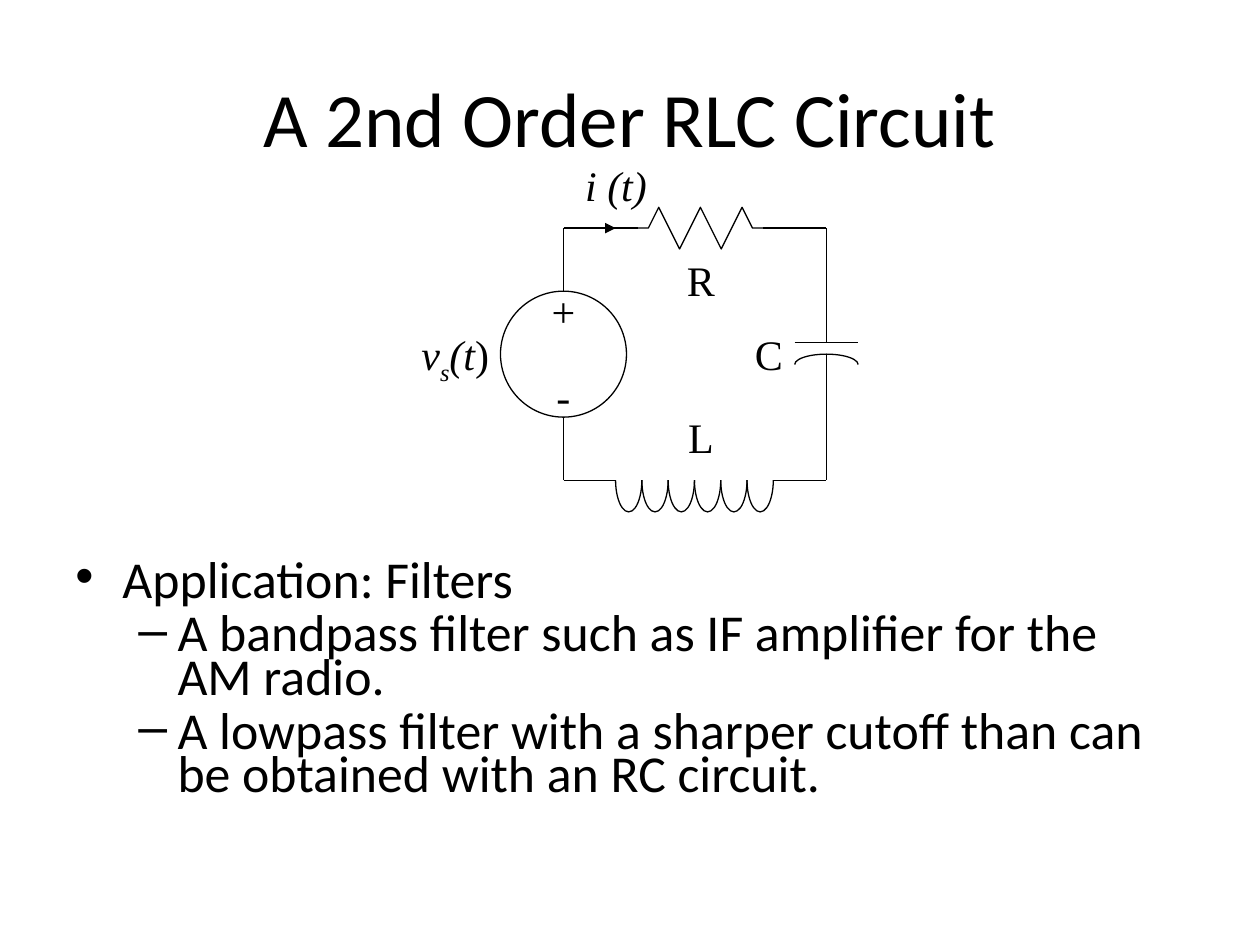
import dataclasses
import typing

import lxml.etree
import pptx
import pptx.dml.color
import pptx.enum.dml
import pptx.enum.shapes
import pptx.enum.text
import pptx.oxml.ns
import pptx.util

Cm = pptx.util.Cm
Pt = pptx.util.Pt
Align = pptx.enum.text.PP_ALIGN
Shape = pptx.enum.shapes.MSO_SHAPE
qn = pptx.oxml.ns.qn

COLORS = {"ink": "000000"}
SANS = "Calibri"
SERIF = "Times New Roman"
LINE_WIDTH = 0.75

LEFT, RIGHT, TOP, BOTTOM = 11.36, 16.66, 4.6, 9.68
SOURCE_TOP, SOURCE_SIZE = 5.87, 2.54
RESISTOR_START, RESISTOR_STEP, RESISTOR_RISE = 12.86, 0.21, 0.42
RESISTOR_END = RESISTOR_START + 12 * RESISTOR_STEP
PLATE_TOP, PLATE_BOTTOM, PLATE_HALF = 6.91, 7.14, 0.64
COIL_START, COIL_STEP, COIL_TURNS, COIL_DEPTH = 12.41, 0.53, 6, 0.64
COIL_END = COIL_START + COIL_TURNS * COIL_STEP


@dataclasses.dataclass(frozen=True)
class Span:
    text: str
    italic: bool = False
    baseline: int = 0


@dataclasses.dataclass(frozen=True)
class Label:
    spans: tuple[Span, ...]
    left: float
    top: float
    width: float
    align: typing.Any = Align.CENTER


@dataclasses.dataclass(frozen=True)
class Wire:
    start: tuple[float, float]
    end: tuple[float, float]
    arrow: bool = False


@dataclasses.dataclass(frozen=True)
class Bullet:
    text: str
    mark: str
    margin: float
    hang: float


LABELS = [
    Label((Span("R"),), 12.86, 5.0, 2.54),
    Label((Span("L"),), 12.86, 8.18, 2.54),
    Label((Span("+"),), 10.51, 5.64, 1.7),
    Label((Span("-"),), 10.51, 7.34, 1.7),
    Label((Span("C"),), 13.06, 6.5, 2.97, Align.RIGHT),
    Label((Span("v", True), Span("s", True, -25000), Span("(t", True), Span(")")),
          7.14, 6.5, 2.97, Align.RIGHT),
    Label((Span("i (t)", True),), 11.15, 3.1, 2.54),
]

WIRES = [
    Wire((LEFT, SOURCE_TOP), (LEFT, TOP)),
    Wire((LEFT, TOP), (RESISTOR_START, TOP)),
    Wire((RESISTOR_END, TOP), (RIGHT, TOP)),
    Wire((RIGHT, TOP), (RIGHT, PLATE_TOP)),
    Wire((RIGHT - PLATE_HALF, PLATE_TOP), (RIGHT + PLATE_HALF, PLATE_TOP)),
    Wire((RIGHT, PLATE_BOTTOM), (RIGHT, BOTTOM)),
    Wire((COIL_END, BOTTOM), (RIGHT, BOTTOM)),
    Wire((LEFT, BOTTOM), (COIL_START, BOTTOM)),
    Wire((LEFT, BOTTOM), (LEFT, SOURCE_TOP + SOURCE_SIZE)),
    Wire((11.99, TOP), (12.41, TOP), arrow=True),
]

BULLETS = [
    Bullet("Application: Filters", "•", 0.95, 0.95),
    Bullet("A bandpass filter such as IF amplifier for the AM radio.", "–", 2.06, 0.79),
    Bullet("A lowpass filter with a sharper cutoff than can be obtained with an RC circuit.",
           "–", 2.06, 0.79),
]


def ink() -> pptx.dml.color.RGBColor:
    return pptx.dml.color.RGBColor.from_string(COLORS["ink"])


def add_span(para, text: str, *, size: float, font: str,
             italic: bool = False, baseline: int = 0) -> None:
    span = para.add_run()
    span.text = text
    span.font.size = Pt(size)
    span.font.name = font
    span.font.italic = italic
    span.font.color.rgb = ink()
    if baseline:
        span._r.get_or_add_rPr().set("baseline", str(baseline))


def add_box(page, left: float, top: float, width: float, height: float):
    box = page.shapes.add_textbox(Cm(left), Cm(top), Cm(width), Cm(height))
    box.text_frame.word_wrap = True
    return box.text_frame


def add_label(page, label: Label) -> None:
    para = add_box(page, label.left, label.top, label.width, 1.27).paragraphs[0]
    para.alignment = label.align
    for span in label.spans:
        add_span(para, span.text, size=24, font=SERIF,
                 italic=span.italic, baseline=span.baseline)


def add_wire(page, wire: Wire) -> None:
    line = page.shapes.add_connector(
        pptx.enum.shapes.MSO_CONNECTOR.STRAIGHT,
        *(Cm(value) for value in wire.start + wire.end))
    line.line.color.rgb = ink()
    line.line.width = Pt(LINE_WIDTH)
    if wire.arrow:
        lxml.etree.SubElement(line.line._get_or_add_ln(), qn("a:tailEnd"), type="triangle")
    lxml.etree.SubElement(line._element.spPr, qn("a:effectLst"))


def outline(shape) -> None:
    shape.shadow.inherit = False
    shape.fill.background()
    shape.line.color.rgb = ink()
    shape.line.width = Pt(LINE_WIDTH)


def add_outline(page, kind, left: float, top: float, width: float, height: float,
                angles: tuple[int, ...] = ()) -> None:
    shape = page.shapes.add_shape(kind, Cm(left), Cm(top), Cm(width), Cm(height))
    for index, degrees in enumerate(angles):
        shape.adjustments[index] = degrees * 0.6
    outline(shape)


def add_resistor(page) -> None:
    corners = [(0, 0), (1, 0), (2, -1), (4, 1), (6, -1), (8, 1), (10, -1), (11, 0), (12, 0)]
    points = [(Cm(RESISTOR_START + x * RESISTOR_STEP), Cm(TOP + y * RESISTOR_RISE))
              for x, y in corners]
    builder = page.shapes.build_freeform(*points[0])
    builder.add_line_segments(points[1:], close=False)
    outline(builder.convert_to_shape())


def add_bullets(page) -> None:
    frame = add_box(page, 1.27, 11.23, 22.86, 5.79)
    for index, bullet in enumerate(BULLETS):
        para = frame.paragraphs[0] if index == 0 else frame.add_paragraph()
        properties = para._p.get_or_add_pPr()
        properties.set("marL", str(Cm(bullet.margin)))
        properties.set("indent", str(-Cm(bullet.hang)))
        lxml.etree.SubElement(properties, qn("a:buFont"), typeface="Arial")
        lxml.etree.SubElement(properties, qn("a:buChar"), char=bullet.mark)
        para.line_spacing = 0.7
        if index:
            para.level = 1
            para.space_before = Pt(5.9)
        add_span(para, bullet.text, size=29.6, font=SANS)


def main() -> None:
    deck = pptx.Presentation()
    deck.slide_width, deck.slide_height = Cm(25.4), Cm(19.05)
    page = deck.slides.add_slide(deck.slide_layouts[6])

    title = add_box(page, 1.27, 0.76, 22.86, 3.18)
    title.vertical_anchor = pptx.enum.text.MSO_ANCHOR.MIDDLE
    title.paragraphs[0].alignment = Align.CENTER
    add_span(title.paragraphs[0], "A 2nd Order RLC Circuit", size=44, font=SANS)

    add_outline(page, Shape.OVAL, LEFT - SOURCE_SIZE / 2, SOURCE_TOP, SOURCE_SIZE, SOURCE_SIZE)
    add_resistor(page)
    add_outline(page, Shape.ARC, RIGHT - PLATE_HALF, PLATE_BOTTOM, 2 * PLATE_HALF, 0.42, (180, 0))
    for turn in range(COIL_TURNS):
        add_outline(page, Shape.ARC, COIL_START + turn * COIL_STEP, BOTTOM - COIL_DEPTH,
                    COIL_STEP, 2 * COIL_DEPTH, (0, 180))
    for wire in WIRES:
        add_wire(page, wire)
    for label in LABELS:
        add_label(page, label)
    add_bullets(page)
    deck.save("out.pptx")


if __name__ == "__main__":
    main()
